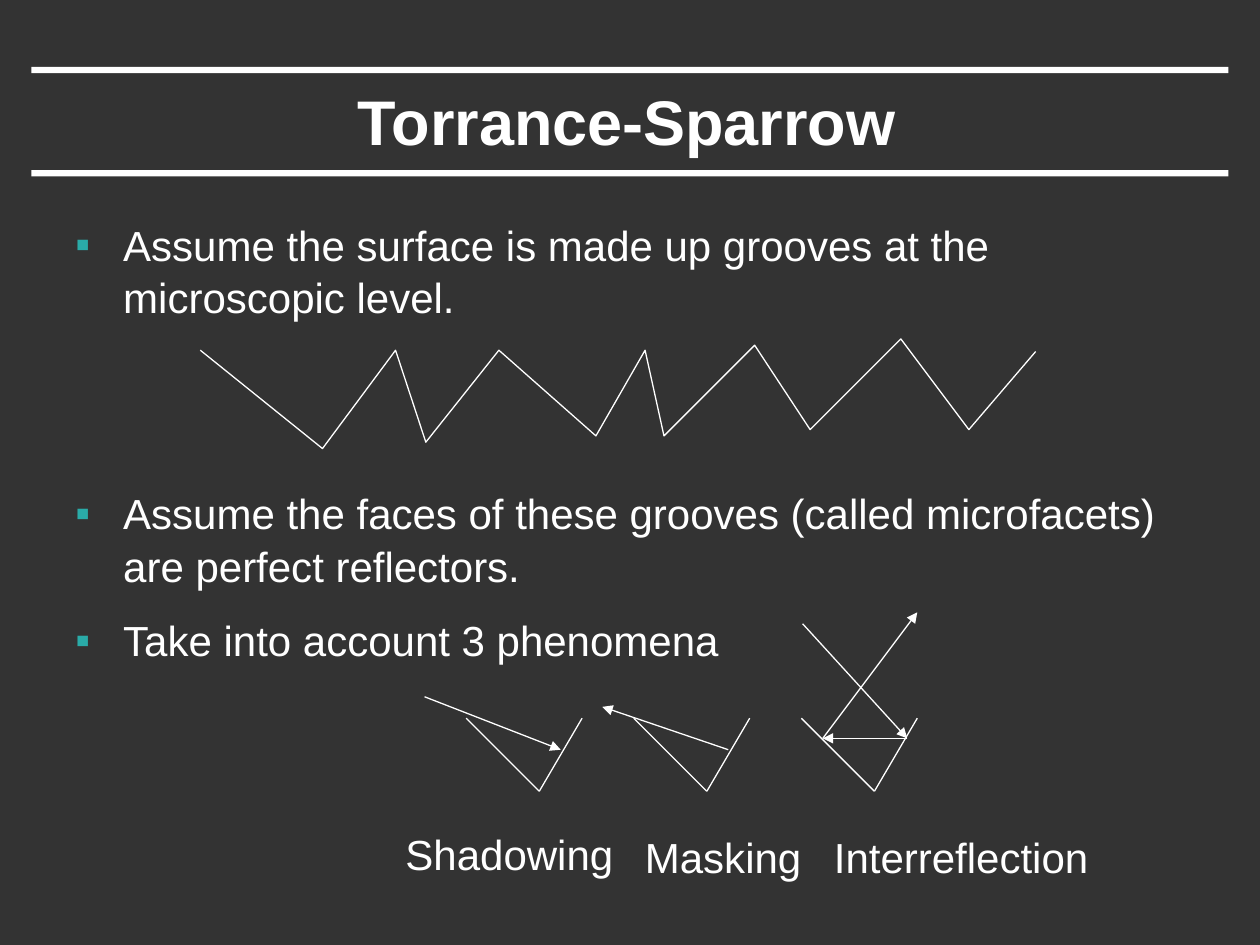
"""Build the Torrance-Sparrow slide on microfacet grooves."""
import dataclasses

import pptx
import pptx.dml.color
import pptx.enum.shapes
import pptx.enum.text
import pptx.oxml
import pptx.oxml.ns
import pptx.util

Inches = pptx.util.Inches
Pt = pptx.util.Pt
Align = pptx.enum.text.PP_ALIGN
Anchor = pptx.enum.text.MSO_ANCHOR
Kind = pptx.enum.shapes.MSO_SHAPE
Link = pptx.enum.shapes.MSO_CONNECTOR


@dataclasses.dataclass(frozen=True)
class Theme:
    back: str = "333333"
    ink: str = "FFFFFF"
    mark: str = "2AABA8"
    font: str = "Arial"
    head: int = 36
    body: int = 24
    thin: float = 0.75


def color(code):
    return pptx.dml.color.RGBColor.from_string(code)


def apply(target, values):
    for name, value in values.items():
        setattr(target, name, value)


def attach(parent, xml):
    space = pptx.oxml.ns.nsdecls("a")
    parent.append(pptx.oxml.parse_xml(xml.replace("/>", f" {space}/>", 1)
                                      if xml.count("<") == 1
                                      else xml.replace(">", f" {space}>", 1)))


class Painter:
    def __init__(self, slide, theme):
        self.shapes = slide.shapes
        self.theme = theme
        fill = slide.background.fill
        fill.solid()
        fill.fore_color.rgb = color(theme.back)

    def bar(self, top):
        shape = self.shapes.add_shape(Kind.RECTANGLE, Inches(0.25), Inches(top),
                                      Inches(9.5), Inches(0.05))
        shape.shadow.inherit = False
        shape.fill.solid()
        shape.fill.fore_color.rgb = color(self.theme.ink)
        shape.line.fill.background()

    def text(self, box, lines, size, frame=None, para=None, bold=False):
        """Add a text box of (text, space before) lines and return its paragraphs."""
        body = self.shapes.add_textbox(*map(Inches, box)).text_frame
        apply(body, {"word_wrap": True, **(frame or {})})
        items = []
        for order, (words, gap) in enumerate(lines):
            item = body.add_paragraph() if order else body.paragraphs[0]
            apply(item, {"space_before": Pt(gap), **(para or {})})
            run = item.add_run()
            run.text = words
            apply(run.font, {"name": self.theme.font, "size": Pt(size), "bold": bold})
            run.font.color.rgb = color(self.theme.ink)
            items.append(item)
        return items

    def bullets(self, box, lines):
        for item in self.text(box, lines, self.theme.body, para={"line_spacing": 1.05}):
            props = item._p.get_or_add_pPr()
            props.set("marL", str(Inches(0.38)))
            props.set("indent", str(-Inches(0.38)))
            attach(props, f'<a:buClr><a:srgbClr val="{self.theme.mark}"/></a:buClr>')
            attach(props, f'<a:buFont typeface="{self.theme.font}"/>')
            attach(props, '<a:buChar char="▪"/>')

    def stroke(self, shape):
        shape.line.color.rgb = color(self.theme.ink)
        shape.line.width = Pt(self.theme.thin)

    def line(self, start, end, arrow=False):
        shape = self.shapes.add_connector(Link.STRAIGHT, *map(Inches, (*start, *end)))
        self.stroke(shape)
        if arrow:
            attach(shape.line._get_or_add_ln(), '<a:tailEnd type="triangle"/>')
        attach(shape._element.spPr, "<a:effectLst/>")

    def ridge(self, points):
        spots = [(Inches(x), Inches(y)) for x, y in points]
        form = self.shapes.build_freeform(*spots[0], scale=1.0)
        form.add_line_segments(spots[1:], close=False)
        shape = form.convert_to_shape()
        shape.shadow.inherit = False
        shape.fill.background()
        self.stroke(shape)

    def groove(self, left, rays):
        base = (left + 0.58, 6.28)
        self.line((left, 5.7), base)
        self.line(base, (left + 0.92, 5.7))
        for start, end in rays:
            self.line(start, end, arrow=True)


RIDGE = [(1.59, 2.78), (2.56, 3.56), (3.14, 2.78), (3.38, 3.51), (3.96, 2.78),
         (4.73, 3.46), (5.12, 2.78), (5.27, 3.46), (5.99, 2.74), (6.43, 3.41),
         (7.15, 2.69), (7.69, 3.41), (8.22, 2.79)]
POINTS = [
    ("Assume the surface is made up grooves at the microscopic level.", 0),
    ("Assume the faces of these grooves (called microfacets) "
     "are perfect reflectors.", 93),
    ("Take into account 3 phenomena", 12),
]
CASES = [
    ("Shadowing", (3.12, 6.53, 1.87, 0.5), [((3.37, 5.53), (4.45, 5.95))]),
    ("Masking", (5.02, 6.55, 1.46, 0.5), [((5.78, 5.95), (4.78, 5.61))]),
    ("Interreflection", (6.52, 6.55, 2.24, 0.5),
     [((6.37, 4.95), (7.2, 5.86)), ((7.2, 5.86), (6.53, 5.86)),
      ((6.53, 5.86), (7.28, 4.86))]),
]


def main():
    deck = pptx.Presentation()
    apply(deck, {"slide_width": Inches(10), "slide_height": Inches(7.5)})
    theme = Theme()
    paint = Painter(deck.slides.add_slide(deck.slide_layouts[6]), theme)
    for top in (1.35, 0.53):
        paint.bar(top)
    paint.text((0.74, 0.58, 8.47, 0.75), [("Torrance-Sparrow", 0)], theme.head,
               {"vertical_anchor": Anchor.MIDDLE}, {"alignment": Align.CENTER}, True)
    paint.bullets((0.5, 1.67, 9, 5.5), POINTS)
    paint.ridge(RIDGE)
    for order, (label, box, rays) in enumerate(CASES):
        paint.groove(3.7 + order * 1.33, rays)
        paint.text(box, [(label, 0)], theme.body, {"word_wrap": False})
    deck.save("out.pptx")


if __name__ == "__main__":
    main()
